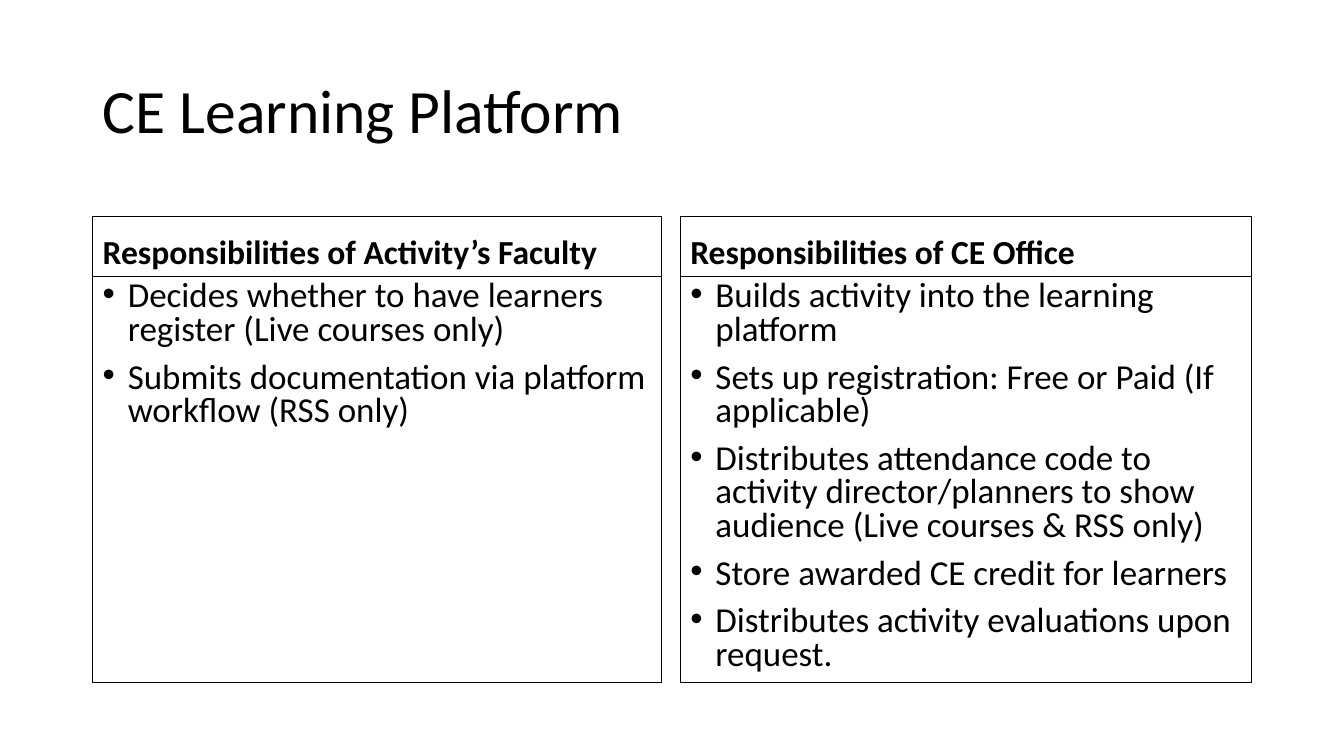
from dataclasses import dataclass

import pptx
import pptx.dml.color
import pptx.enum.text
import pptx.util
from lxml import etree
from pptx.oxml.ns import qn

Pt = pptx.util.Pt
Anchor = pptx.enum.text.MSO_ANCHOR
BLACK = "000000"
HEAD_TOP, HEAD_HEIGHT, LIST_HEIGHT = 154.8, 42.48, 290.16
INDENT = 18


@dataclass
class Column:
    left: float
    width: float
    heading: str
    duties: list[str]


COLUMNS = [
    Column(66.24, 406.08, "Responsibilities of Activity’s Faculty", [
        "Decides whether to have learners register (Live courses only)",
        "Submits documentation via platform workflow (RSS only)",
    ]),
    Column(486, 408.24, "Responsibilities of CE Office", [
        "Builds activity into the learning platform",
        "Sets up registration: Free or Paid (If applicable)",
        "Distributes attendance code to activity director/planners to show "
        "audience (Live courses & RSS only)",
        "Store awarded CE credit for learners",
        "Distributes activity evaluations upon request.",
    ]),
]


def rgb(value: str) -> pptx.dml.color.RGBColor:
    return pptx.dml.color.RGBColor.from_string(value)


def format_paragraph(p, size: float, spacing: float, before: float = 0, bold: bool = False) -> None:
    p.alignment = pptx.enum.text.PP_ALIGN.LEFT
    p.line_spacing = spacing
    p.space_before = Pt(before)
    p.font.name = "Calibri"
    p.font.size = Pt(size)
    p.font.bold = bold
    p.font.color.rgb = rgb(BLACK)


def add_bullet(p) -> None:
    pPr = p._p.get_or_add_pPr()
    pPr.set("marL", str(Pt(INDENT)))
    pPr.set("indent", str(-Pt(INDENT)))
    # Bullet elements precede the default run properties
    font = etree.Element(qn("a:buFont"), typeface="Arial")
    char = etree.Element(qn("a:buChar"), char="•")
    defaults = pPr.find(qn("a:defRPr"))
    defaults.addprevious(font)
    defaults.addprevious(char)


def add_box(s, column: Column, top: float, height: float, anchor: Anchor):
    sp = s.shapes.add_textbox(Pt(column.left), Pt(top), Pt(column.width), Pt(height))
    sp.line.color.rgb = rgb(BLACK)
    sp.line.width = Pt(0.75)
    tf = sp.text_frame
    tf.word_wrap = True
    tf.vertical_anchor = anchor
    return tf


def add_column(s, column: Column) -> None:
    tf = add_box(s, column, HEAD_TOP, HEAD_HEIGHT, Anchor.BOTTOM)
    tf.text = column.heading
    format_paragraph(tf.paragraphs[0], 24, 0.9, before=10, bold=True)

    tf = add_box(s, column, HEAD_TOP + HEAD_HEIGHT, LIST_HEIGHT, Anchor.TOP)
    tf.text = "\n".join(column.duties)
    for p in tf.paragraphs:
        format_paragraph(p, 25, 0.8, before=10)
        add_bullet(p)


def main() -> None:
    prs = pptx.Presentation()
    prs.slide_width, prs.slide_height = Pt(960), Pt(540)
    s = prs.slides.add_slide(prs.slide_layouts[5])

    # Title
    title = s.shapes.title
    title.left, title.top, title.width, title.height = Pt(66.24), Pt(28.8), Pt(828), Pt(104.4)
    tf = title.text_frame
    tf.text = "CE Learning Platform"
    tf.vertical_anchor = Anchor.MIDDLE
    tf.auto_size = pptx.enum.text.MSO_AUTO_SIZE.NONE
    format_paragraph(tf.paragraphs[0], 44, 0.9)

    # Responsibilities side by side
    for column in COLUMNS:
        add_column(s, column)

    prs.save("out.pptx")


if __name__ == "__main__":
    main()
